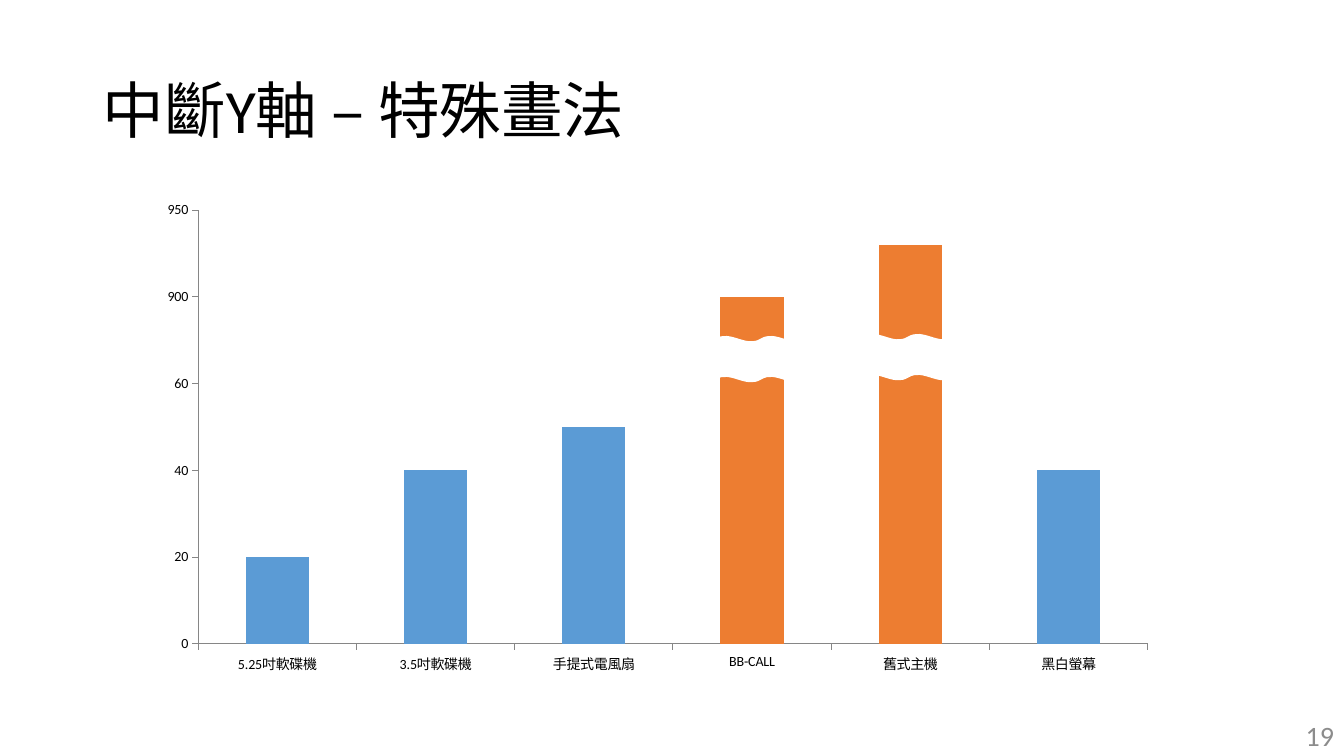
from copy import deepcopy
from lxml import etree
from pptx import Presentation, util as u
from pptx.chart.data import CategoryChartData
from pptx.dml.color import RGBColor
from pptx.enum import chart as ce, shapes, text
from pptx.oxml.ns import qn

C_NS = "http://schemas.openxmlformats.org/drawingml/2006/chart"
A_NS = "http://schemas.openxmlformats.org/drawingml/2006/main"
CATS = ["5.25吋軟碟機", "3.5吋軟碟機", "手提式電風扇", "BB-CALL", "舊式主機", "黑白螢幕"]
LOW = [20, 40, 50, None, None, 40]
HIGH = [None, None, None, 900, 930, None]
BREAKS = [(14.32, 3.68), (18.03, 3.63)]  # offsets from the chart's corner, cm


def rgb(hex_):
    return RGBColor.from_string(hex_)


def set_attrs(obj, fmt):
    for name, value in fmt.items():
        setattr(obj, name, value)


def set_font(font, size, color):
    set_attrs(font, {"name": "Calibri", "size": u.Pt(size), "bold": False})
    font.color.rgb = rgb(color)


def place(sp, box):
    set_attrs(sp, dict(zip(("left", "top", "width", "height"), map(u.Cm, box))))


def write(sp, words, size, color, align, spacing=1.0):
    tf = sp.text_frame
    set_attrs(tf, {"word_wrap": True, "vertical_anchor": text.MSO_ANCHOR.MIDDLE})
    p = tf.paragraphs[0]
    set_attrs(p, {"alignment": align, "line_spacing": spacing})
    r = p.add_run()
    r.text = words
    set_font(r.font, size, color)


def add_title(s, box):
    sp = s.shapes.title
    place(sp, box)
    write(sp, "中斷Y軸 – 特殊畫法", 44, "000000", text.PP_ALIGN.LEFT, 0.9)


def add_page_number(s, box):
    sp = s.shapes.add_textbox(*map(u.Cm, box))
    write(sp, "19", 20, "8C8C8C", text.PP_ALIGN.RIGHT)


def add_right_axis(chart):
    """Move the second series to a hidden axis that runs from 700 to 950."""
    bars = chart.plots[0]._element
    high = deepcopy(bars)
    bars.remove(bars.findall(qn("c:ser"))[1])
    high.remove(high.findall(qn("c:ser"))[0])
    for ax_id, new_id in zip(high.findall(qn("c:axId")), ("5001", "5002")):
        ax_id.set("val", new_id)
    bars.addnext(high)
    axes = etree.fromstring(f'''<axes xmlns:c="{C_NS}" xmlns:a="{A_NS}">
      <c:catAx><c:axId val="5001"/><c:scaling><c:orientation val="minMax"/></c:scaling>
        <c:delete val="1"/><c:axPos val="b"/><c:majorTickMark val="none"/>
        <c:minorTickMark val="none"/><c:tickLblPos val="none"/>
        <c:crossAx val="5002"/><c:crosses val="autoZero"/></c:catAx>
      <c:valAx><c:axId val="5002"/><c:scaling><c:orientation val="minMax"/>
        <c:max val="950"/><c:min val="700"/></c:scaling>
        <c:delete val="0"/><c:axPos val="r"/><c:majorTickMark val="none"/>
        <c:minorTickMark val="none"/><c:tickLblPos val="none"/>
        <c:spPr><a:ln><a:noFill/></a:ln></c:spPr>
        <c:crossAx val="5001"/><c:crosses val="max"/>
        <c:crossBetween val="between"/><c:majorUnit val="50"/></c:valAx></axes>''')
    last = chart.value_axis._element
    for axis in reversed(list(axes)):
        last.addnext(axis)


def set_plot_box(chart, x, y, w, h):
    area = chart.plots[0]._element.getparent()
    for old in area.findall(qn("c:layout")):
        area.remove(old)
    sizes = "".join(f'<c:{k} val="{v}"/>' for k, v in zip("xywh", (x, y, w, h)))
    area.insert(0, etree.fromstring(
        f'<c:layout xmlns:c="{C_NS}"><c:manualLayout><c:layoutTarget val="inner"/>'
        f'<c:xMode val="edge"/><c:yMode val="edge"/>{sizes}</c:manualLayout></c:layout>'))


def add_broken_chart(s, box):
    # Columns
    data = CategoryChartData()
    data.categories = CATS
    data.add_series("Series 1", LOW)
    data.add_series("Series 2", HIGH)
    chart = s.shapes.add_chart(ce.XL_CHART_TYPE.COLUMN_CLUSTERED, *map(u.Cm, box), data).chart
    set_attrs(chart, {"has_title": False, "has_legend": False})
    set_font(chart.font, 10, "000000")
    set_attrs(chart.plots[0], {"gap_width": 150, "vary_by_categories": False})
    for ser, color in zip(chart.plots[0].series, ("5B9BD5", "ED7D31")):
        ser.format.fill.solid()
        ser.format.fill.fore_color.rgb = rgb(color)

    # Axes
    for axis in (chart.category_axis, chart.value_axis):
        set_attrs(axis, {"has_major_gridlines": False,
                         "major_tick_mark": ce.XL_TICK_MARK.OUTSIDE,
                         "minor_tick_mark": ce.XL_TICK_MARK.NONE})
        axis.format.line.color.rgb = rgb("868686")
        axis.format.line.width = u.Pt(0.75)
    set_attrs(chart.value_axis, {"minimum_scale": 0, "maximum_scale": 100, "major_unit": 20})
    set_attrs(chart.value_axis.tick_labels, {"number_format": '[=80]"900";[=100]"950";0',
                                             "number_format_is_linked": False})
    add_right_axis(chart)
    set_plot_box(chart, 0.05, 0.04, 0.93, 0.88)

    # White waves that break the tall columns
    for dx, dy in BREAKS:
        sp = s.shapes.add_shape(shapes.MSO_SHAPE.DOUBLE_WAVE, u.Cm(box[0] + dx),
                                u.Cm(box[1] + dy), u.Cm(2.29), u.Cm(1.14))
        sp.shadow.inherit = False
        sp.fill.solid()
        sp.fill.fore_color.rgb = rgb("FFFFFF")
        sp.line.color.rgb = rgb("FFFFFF")
        sp.line.width = u.Pt(1)


def main():
    prs = Presentation()
    set_attrs(prs, {"slide_width": u.Cm(33.87), "slide_height": u.Cm(19.05)})
    s = prs.slides.add_slide(prs.slide_layouts[5])
    add_title(s, (2.33, 1.01, 29.21, 3.68))
    add_page_number(s, (26.25, 18.03, 7.62, 1.02))
    add_broken_chart(s, (3.71, 4.8, 25.73, 12.42))
    prs.save("out.pptx")


if __name__ == "__main__":
    main()
